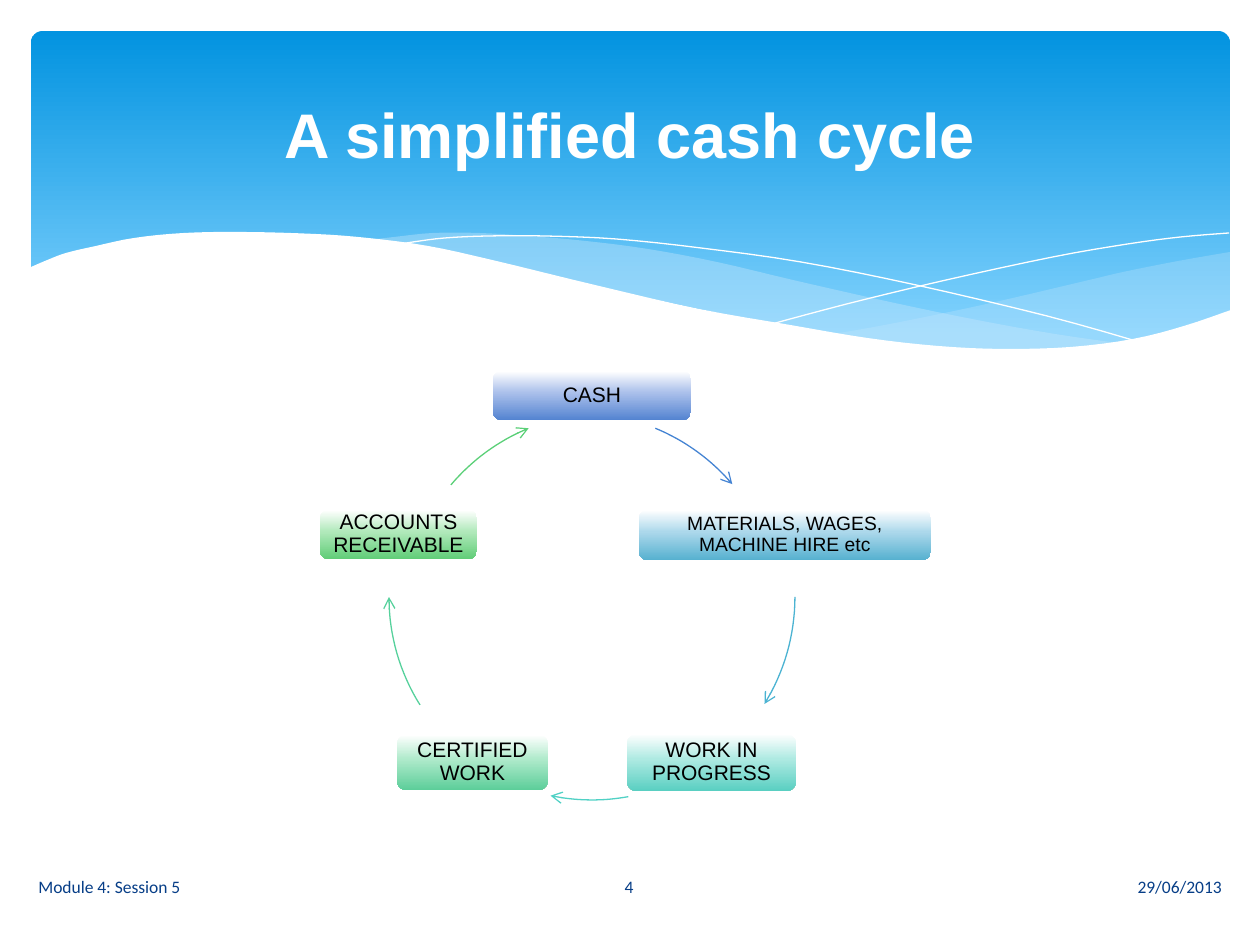
from dataclasses import dataclass
from math import cos, radians, sin

from lxml.etree import SubElement
from pptx import Presentation
from pptx.dml.color import RGBColor
from pptx.enum.shapes import MSO_SHAPE
from pptx.enum.text import MSO_ANCHOR, PP_ALIGN
from pptx.oxml.ns import qn
from pptx.util import Pt

PX = 914400 / 126  # EMU in one px


@dataclass(frozen=True)
class Theme:
    heading_font: str = "Arial"
    footer_font: str = "Calibri"
    title_size: int = 36
    footer_size: int = 10
    white: str = "FFFFFF"
    black: str = "000000"
    footer: str = "073E87"
    wave: str = "C6E7FC"
    band: tuple = ((0, "0293E0"), (90, "83D3FE"))
    arrow_width: float = 0.75


THEME = Theme()

# Content
TITLE = "A simplified cash cycle"
# text, box, type size, middle and end gradient colours
STAGES = [
    ("CASH", (493, 371, 198, 49), 12, "ABC0EB", "5484D1"),
    ("MATERIALS, WAGES, MACHINE HIRE etc", (639, 510, 292, 50), 11, "ACD8EB", "57B1D0"),
    ("WORK IN PROGRESS", (627, 734, 169, 57), 12, "AEEAE2", "5ACFC2"),
    ("CERTIFIED WORK", (397, 735, 151, 55), 12, "AFEACB", "5DCE9A"),
    ("ACCOUNTS RECEIVABLE", (320, 510, 157, 49), 12, "B1E9BB", "61CD78"),
]
# circle centre, clockwise angles from the top, colour
CYCLE_RADIUS = 203
ARROWS = [
    ((578, 616), 22.4, 49.5, "4584D3"),
    ((592, 597), 90, 121.8, "4BB3D2"),
    ((592, 597), 169.7, 191.8, "50D1C5"),
    ((592, 597), 237.9, 270, "56D19C"),
    ((606, 616), 310.2, 337.6, "5BD078"),
]
FOOTERS = [
    ("29/06/2013", (712, 862, 522, 50), PP_ALIGN.RIGHT),
    ("Module 4: Session 5", (26, 862, 522, 50), PP_ALIGN.LEFT),
    ("4", (549, 862, 160, 50), PP_ALIGN.CENTER),
]

# Header waves: edges are knots of smooth curves
BAND = (31, 31, 1199, 340)
RIGHT_WAVE = [
    [(1230, 252), (1178, 261), (1123, 272), (1085, 281), (982, 305), (890, 324), (833, 334)],
    [(833, 334), (888, 341), (938, 347), (998, 349), (1064, 348), (1120, 343), (1178, 332),
     (1230, 311)],
]
MIDDLE_WAVE = [
    [(1125, 344), (1055, 334), (977, 320), (890, 302), (793, 280), (717, 262), (648, 249),
     (586, 241), (529, 236), (479, 233), (433, 233), (394, 237), (360, 241)],
    [(360, 241), (431, 251), (509, 266), (566, 280), (668, 302), (757, 321), (838, 335),
     (911, 345), (989, 350), (1056, 350), (1125, 344)],
]
THIN_LINES = [
    [(389, 246), (413, 242), (445, 238), (488, 236), (545, 236), (616, 239), (701, 248),
     (801, 262), (916, 285), (1047, 316), (1143, 343)],
    [(772, 324), (847, 304), (942, 281), (1053, 257), (1128, 244), (1181, 237), (1229, 233)],
]
FRONT_WAVE = [
    (1231, 310), (1184, 326), (1133, 339), (1071, 347), (1002, 349), (938, 346), (867, 338),
    (790, 325), (699, 309), (599, 286), (492, 260), (428, 246), (368, 238), (315, 234),
    (243, 232), (184, 233), (134, 238), (96, 246), (66, 253), (45, 261), (29, 268)]
FRONT_BASE = [(29, 415), (1231, 415)]


def emu(lengths):
    return [round(length * PX) for length in lengths]


def color(value):
    return RGBColor.from_string(value)


def smooth(knots, steps=4):
    """Points on a Catmull-Rom curve through the knots."""
    padded = [knots[0], *knots, knots[-1]]
    points = []
    for a, b, c, d in zip(padded, padded[1:], padded[2:], padded[3:]):
        for t in (step / steps for step in range(steps)):
            points.append(tuple(
                q + t / 2 * (r - p + t * (2 * p - 5 * q + 4 * r - s
                                          + t * (3 * (q - r) + s - p)))
                for p, q, r, s in zip(a, b, c, d)))
    return points + [knots[-1]]


def arc(center, start, end, steps=16):
    angles = [radians(start + (end - start) * i / steps) for i in range(steps + 1)]
    return [(center[0] + CYCLE_RADIUS * sin(angle), center[1] - CYCLE_RADIUS * cos(angle))
            for angle in angles]


def add_area(slide, points, fill, opacity=100):
    shape = add_outline(slide, points, True)
    shape.fill.solid()
    shape.fill.fore_color.rgb = color(fill)
    shape.line.fill.background()
    fill_color = shape._element.spPr.find(qn("a:solidFill"))[0]
    SubElement(fill_color, qn("a:alpha"), val=str(opacity * 1000))


def add_curve(slide, points, stroke, width, arrow=False):
    shape = add_outline(slide, points, False)
    shape.fill.background()
    shape.line.color.rgb = color(stroke)
    shape.line.width = Pt(width)
    if arrow:
        SubElement(shape.line._get_or_add_ln(), qn("a:tailEnd"), type="arrow")


def add_outline(slide, points, close):
    first, *rest = [emu(point) for point in points]
    builder = slide.shapes.build_freeform(*first)
    builder.add_line_segments(rest, close=close)
    shape = builder.convert_to_shape()
    shape.shadow.inherit = False
    return shape


def add_gradient_box(slide, box, stops):
    shape = slide.shapes.add_shape(MSO_SHAPE.ROUNDED_RECTANGLE, *emu(box))
    shape.shadow.inherit = False
    shape.line.fill.background()
    shape.fill.gradient()
    shape.fill.gradient_angle = 270
    stop_list = shape._element.spPr.find(qn("a:gradFill")).find(qn("a:gsLst"))
    for stop in list(stop_list):
        stop_list.remove(stop)
    for position, value in stops:
        stop = SubElement(stop_list, qn("a:gs"), pos=str(position * 1000))
        SubElement(stop, qn("a:srgbClr"), val=value)
    return shape


def set_text(shape, text, font, size, value, align=PP_ALIGN.CENTER, bold=False):
    frame = shape.text_frame
    frame.word_wrap = True
    frame.vertical_anchor = MSO_ANCHOR.MIDDLE
    frame.text = text
    paragraph = frame.paragraphs[0]
    paragraph.alignment = align
    paragraph.font.name = font
    paragraph.font.size = Pt(size)
    paragraph.font.bold = bold
    paragraph.font.color.rgb = color(value)
    return frame


def main():
    presentation = Presentation()
    presentation.slide_width, presentation.slide_height = emu((1260, 945))
    slide = presentation.slides.add_slide(presentation.slide_layouts[5])

    # Header band and waves
    band = add_gradient_box(slide, BAND, THEME.band)
    band.adjustments[0] = 0.034
    for edges, opacity in ((RIGHT_WAVE, 29), (MIDDLE_WAVE, 40)):
        add_area(slide, [point for edge in edges for point in smooth(edge)], THEME.wave, opacity)
    for knots in THIN_LINES:
        add_curve(slide, smooth(knots), THEME.white, 0)
    add_area(slide, smooth(FRONT_WAVE) + FRONT_BASE, THEME.white)

    # Title, brought in front of the header
    title = slide.shapes.title
    title.left, title.top, title.width, title.height = emu((63, 47, 1134, 173))
    set_text(title, TITLE, THEME.heading_font, THEME.title_size, THEME.white, bold=True)
    slide.shapes._spTree.append(title._element)

    # Footer
    for text, box, align in FOOTERS:
        set_text(slide.shapes.add_textbox(*emu(box)), text, THEME.footer_font,
                 THEME.footer_size, THEME.footer, align)

    # Cycle
    for (text, box, size, middle, end), (center, start, stop, stroke) in zip(STAGES, ARROWS):
        shape = add_gradient_box(slide, box, ((0, THEME.white), (44, middle), (100, end)))
        frame = set_text(shape, text, THEME.heading_font, size, THEME.black)
        frame.paragraphs[0].line_spacing = 0.9
        frame.margin_left, frame.margin_right, frame.margin_top, frame.margin_bottom = emu([8] * 4)
        add_curve(slide, arc(center, start, stop), stroke, THEME.arrow_width, arrow=True)

    presentation.save("out.pptx")


if __name__ == "__main__":
    main()
